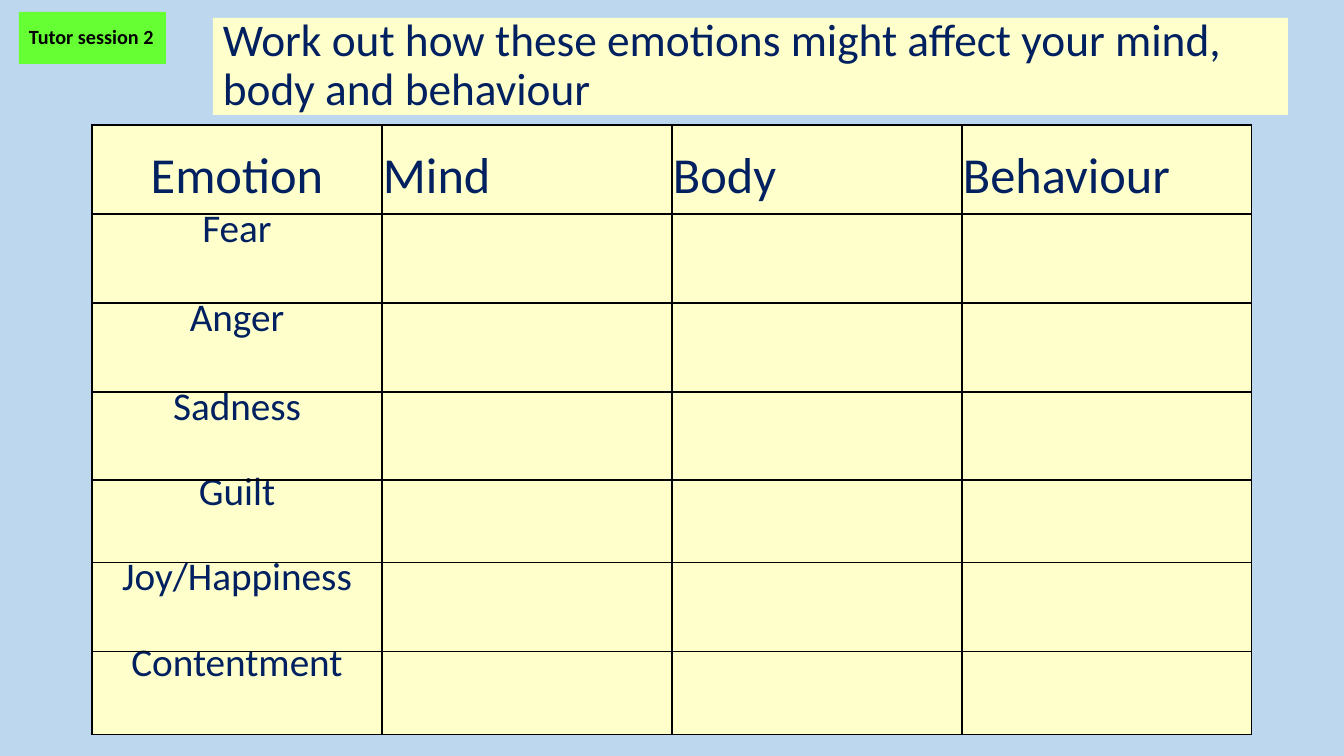
from dataclasses import dataclass

from lxml import etree
from pptx import Presentation
from pptx import util as u
from pptx.dml.color import RGBColor
from pptx.enum import shapes, text
from pptx.oxml.ns import qn

EMU_PER_PX = 914400 / 100.8
FONT = "Calibri"
COLOURS = {
    "sky": "BDD7EE",
    "cream": "FFFFCC",
    "green": "66FF33",
    "navy": "002060",
    "black": "000000",
}


@dataclass(frozen=True)
class Style:
    size: float
    colour: str = "navy"
    bold: bool = False
    spacing: float | u.Pt = 0.9
    align: text.PP_ALIGN = text.PP_ALIGN.LEFT


@dataclass(frozen=True)
class Banner:
    left: int
    top: int
    width: int
    height: int
    fill: str
    words: str
    style: Style


@dataclass(frozen=True)
class EmotionRow:
    name: str
    height: int
    text_top: int


BANNERS = [
    Banner(213, 18, 1075, 97, "cream",
           "Work out how these emotions might affect your mind, body and behaviour",
           Style(32.4)),
    Banner(19, 12, 147, 52, "green", "Tutor session 2", Style(14.4, "black", True)),
]

TABLE_LEFT, TABLE_TOP, COLUMN_WIDTH = 92, 125, 290
HEADINGS = ["Emotion", "Mind", "Body", "Behaviour"]
HEADING_HEIGHT, HEADING_TEXT_TOP = 89, 47
EMOTIONS = [
    EmotionRow("Fear", 89, 4),
    EmotionRow("Anger", 89, 4),
    EmotionRow("Sadness", 88, 4),
    EmotionRow("Guilt", 83, 1),
    EmotionRow("Joy/Happiness", 89, 4),
    EmotionRow("Contentment", 83, 1),
]
LINE_HEIGHT = u.Pt(24.8)
HEADING = Style(36, spacing=LINE_HEIGHT)
FIRST_HEADING = Style(36, spacing=LINE_HEIGHT, align=text.PP_ALIGN.CENTER)
EMOTION = Style(28, spacing=LINE_HEIGHT, align=text.PP_ALIGN.CENTER)


def px(length: int) -> u.Emu:
    return u.Emu(round(length * EMU_PER_PX))


def paint(fill, colour: str) -> None:
    fill.solid()
    fill.fore_color.rgb = RGBColor.from_string(COLOURS[colour])


def write(frame, words: str, style: Style) -> None:
    para = frame.paragraphs[0]
    para.alignment = style.align
    para.line_spacing = style.spacing
    span = para.add_run()
    span.text = words
    span.font.name = FONT
    span.font.size = u.Pt(style.size)
    span.font.bold = style.bold
    span.font.color.rgb = RGBColor.from_string(COLOURS[style.colour])


def add_banner(page, banner: Banner) -> None:
    box = page.shapes.add_shape(
        shapes.MSO_SHAPE.RECTANGLE,
        px(banner.left), px(banner.top), px(banner.width), px(banner.height))
    box.shadow.inherit = False
    paint(box.fill, banner.fill)
    box.line.fill.background()
    box.text_frame.word_wrap = True
    box.text_frame.vertical_anchor = text.MSO_ANCHOR.MIDDLE
    write(box.text_frame, banner.words, banner.style)


def add_borders(cell) -> None:
    """Outline a cell; the lines must precede its fill in the XML."""
    properties = cell._tc.get_or_add_tcPr()
    for index, side in enumerate(["lnL", "lnR", "lnT", "lnB"]):
        line = etree.Element(qn(f"a:{side}"), w=str(u.Pt(1)))
        fill = etree.SubElement(line, qn("a:solidFill"))
        etree.SubElement(fill, qn("a:srgbClr"), val=COLOURS["black"])
        properties.insert(index, line)


def fill_cell(cell, words: str, text_top: int, style: Style) -> None:
    cell.margin_left = cell.margin_right = cell.margin_bottom = px(1)
    cell.margin_top = px(text_top)
    cell.vertical_anchor = text.MSO_ANCHOR.TOP
    write(cell.text_frame, words, style)


def add_emotion_table(page) -> None:
    heights = [HEADING_HEIGHT] + [row.height for row in EMOTIONS]
    table = page.shapes.add_table(
        len(heights), len(HEADINGS), px(TABLE_LEFT), px(TABLE_TOP),
        px(COLUMN_WIDTH * len(HEADINGS)), px(sum(heights))).table
    for column in table.columns:
        column.width = px(COLUMN_WIDTH)
    for row, height in zip(table.rows, heights):
        row.height = px(height)
    for cell in table.iter_cells():
        paint(cell.fill, "cream")
        add_borders(cell)
    for index, heading in enumerate(HEADINGS):
        style = HEADING if index else FIRST_HEADING
        fill_cell(table.cell(0, index), heading, HEADING_TEXT_TOP, style)
    for index, emotion in enumerate(EMOTIONS, start=1):
        fill_cell(table.cell(index, 0), emotion.name, emotion.text_top, EMOTION)


def main() -> None:
    deck = Presentation()
    deck.slide_width, deck.slide_height = px(1344), px(756)
    page = deck.slides.add_slide(deck.slide_layouts[6])
    paint(page.background.fill, "sky")
    add_emotion_table(page)
    for banner in BANNERS:
        add_banner(page, banner)
    deck.save("out.pptx")


if __name__ == "__main__":
    main()
